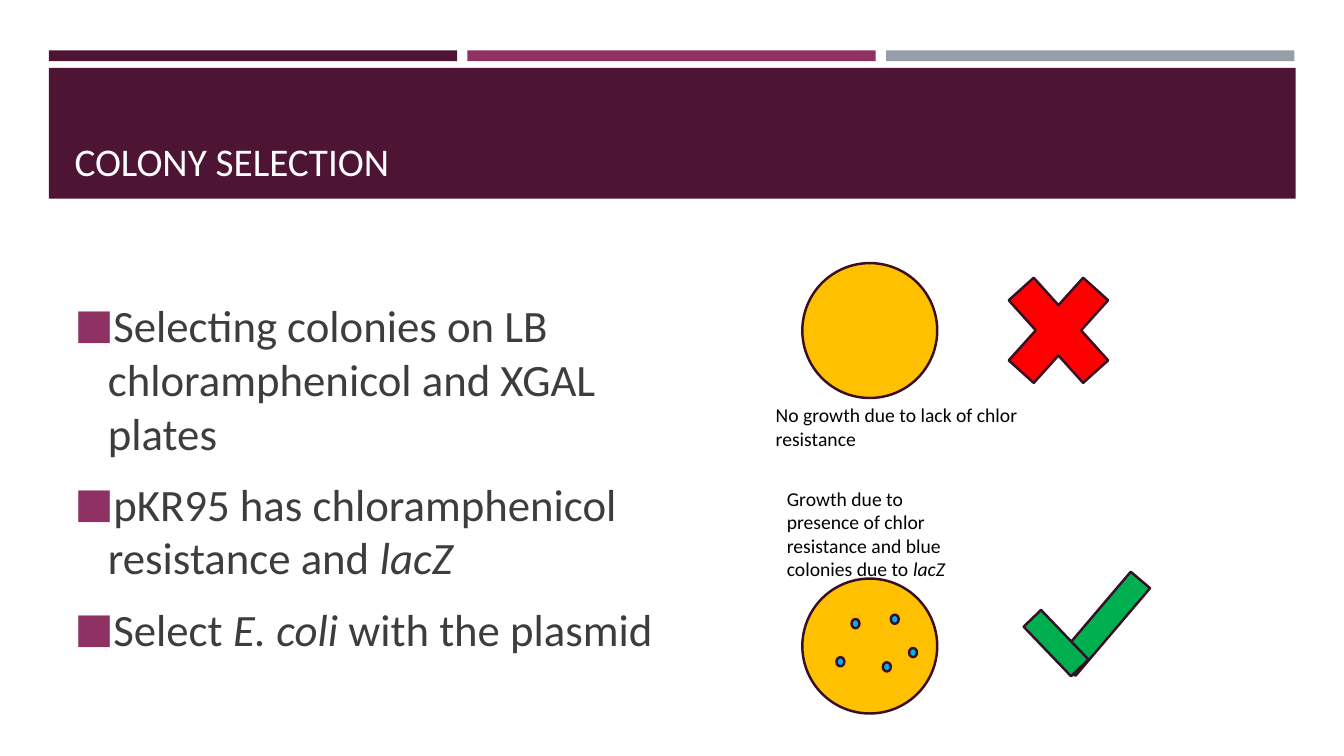
"""Build the colony selection slide and save it as out.pptx."""
import pptx
import pptx.dml.color
import pptx.enum.shapes
import pptx.enum.text
import pptx.oxml
import pptx.oxml.ns
import pptx.util

Cm = pptx.util.Cm
Pt = pptx.util.Pt
RGBColor = pptx.dml.color.RGBColor
Shape = pptx.enum.shapes.MSO_SHAPE
Anchor = pptx.enum.text.MSO_ANCHOR

FONT = "Calibri"
PLUM = RGBColor(0x4D, 0x14, 0x34)
MAGENTA = RGBColor(0x90, 0x31, 0x63)
GREY = RGBColor(0x96, 0x9F, 0xA7)
OUTLINE = RGBColor(0x39, 0x0F, 0x26)
AGAR = RGBColor(0xFF, 0xC0, 0x00)
COLONY_BLUE = RGBColor(0x00, 0xB0, 0xF0)
RED = RGBColor(0xFF, 0x00, 0x00)
GREEN = RGBColor(0x00, 0xB0, 0x50)
WHITE = RGBColor(0xFF, 0xFF, 0xFF)
BLACK = RGBColor(0x00, 0x00, 0x00)
BODY_GREY = RGBColor(0x3D, 0x3D, 0x3D)

deck = pptx.Presentation()
deck.slide_width = Cm(33.87)
deck.slide_height = Cm(19.05)
page = deck.slides.add_slide(deck.slide_layouts[6])


def add_figure(kind, left, top, width, height, fill, outline=None, rotation=0):
    figure = page.shapes.add_shape(kind, Cm(left), Cm(top), Cm(width), Cm(height))
    figure.shadow.inherit = False
    figure.rotation = rotation
    figure.fill.solid()
    figure.fill.fore_color.rgb = fill
    if outline is None:
        figure.line.fill.background()
    else:
        figure.line.color.rgb = outline
        figure.line.width = Pt(1.75)


def add_text(paragraphs, *, left, top, width, height, size, color,
             anchor=Anchor.TOP, bullet_color=None):
    """Write paragraphs of alternating upright and italic pieces."""
    box = page.shapes.add_textbox(Cm(left), Cm(top), Cm(width), Cm(height))
    frame = box.text_frame
    frame.word_wrap = True
    frame.vertical_anchor = anchor
    for index, pieces in enumerate(paragraphs):
        para = frame.add_paragraph() if index else frame.paragraphs[0]
        for position, piece in enumerate(pieces):
            span = para.add_run()
            span.text = piece
            span.font.name = FONT
            span.font.size = Pt(size)
            span.font.color.rgb = color
            span.font.italic = position % 2 == 1
        if bullet_color is not None:
            para.space_before = Pt(size * 0.2)
            para.space_after = Pt(6)
            properties = para._p.get_or_add_pPr()
            properties.set("marL", str(Cm(0.84)))
            properties.set("indent", str(-Cm(0.84)))
            namespace = pptx.oxml.ns.nsdecls("a")
            for markup in (
                f'<a:buClr {namespace}><a:srgbClr val="{bullet_color}"/></a:buClr>',
                f'<a:buSzPct {namespace} val="92000"/>',
                f'<a:buFont {namespace} typeface="{FONT}"/>',
                f'<a:buChar {namespace} char="■"/>',
            ):
                properties.append(pptx.oxml.parse_xml(markup))


for column, bar_color in enumerate((PLUM, MAGENTA, GREY)):
    add_figure(Shape.RECTANGLE, 1.23 + 10.55 * column, 1.27, 10.29, 0.27, bar_color)
add_figure(Shape.RECTANGLE, 1.23, 1.71, 31.42, 3.3, PLUM)

add_text([["COLONY SELECTION"]], left=1.63, top=1.96, width=30.63, height=2.82,
         size=28, color=WHITE, anchor=Anchor.BOTTOM)
add_text(
    [
        ["Selecting colonies on LB chloramphenicol and XGAL plates"],
        ["pKR95 has chloramphenicol resistance and ", "lacZ"],
        ["Select ", "E. coli ", "with the plasmid"],
    ],
    left=1.63, top=6.05, width=15.32, height=11.91,
    size=32, color=BODY_GREY, anchor=Anchor.MIDDLE, bullet_color=MAGENTA,
)

for plate_top in (6.63, 14.58):
    add_figure(Shape.OVAL, 20.22, plate_top, 3.4, 3.4, AGAR, OUTLINE)
for colony_left, colony_top in (
    (21.46, 15.6), (21.08, 16.56), (22.45, 15.49), (22.25, 16.69), (22.91, 16.33),
):
    add_figure(Shape.OVAL, colony_left, colony_top, 0.2, 0.23, COLONY_BLUE, OUTLINE)

add_figure(Shape.MATH_MULTIPLY, 24.87, 6.32, 3.61, 4.01, RED, OUTLINE)
add_figure(Shape.RECTANGLE, 27.48, 14.27, 0.64, 2.9, GREEN, OUTLINE, rotation=40.4)
add_figure(Shape.RECTANGLE, 26.31, 15.34, 0.61, 1.73, GREEN, OUTLINE, rotation=316.2)

add_text([["No growth due to lack of chlor resistance"]],
         left=19.3, top=10.03, width=6.83, height=1.45, size=14, color=BLACK)
add_text([["Growth due to presence of chlor resistance and blue colonies due to ", "lacZ"]],
         left=19.58, top=12.14, width=5.31, height=2.64, size=14, color=BLACK)

deck.save("out.pptx")
